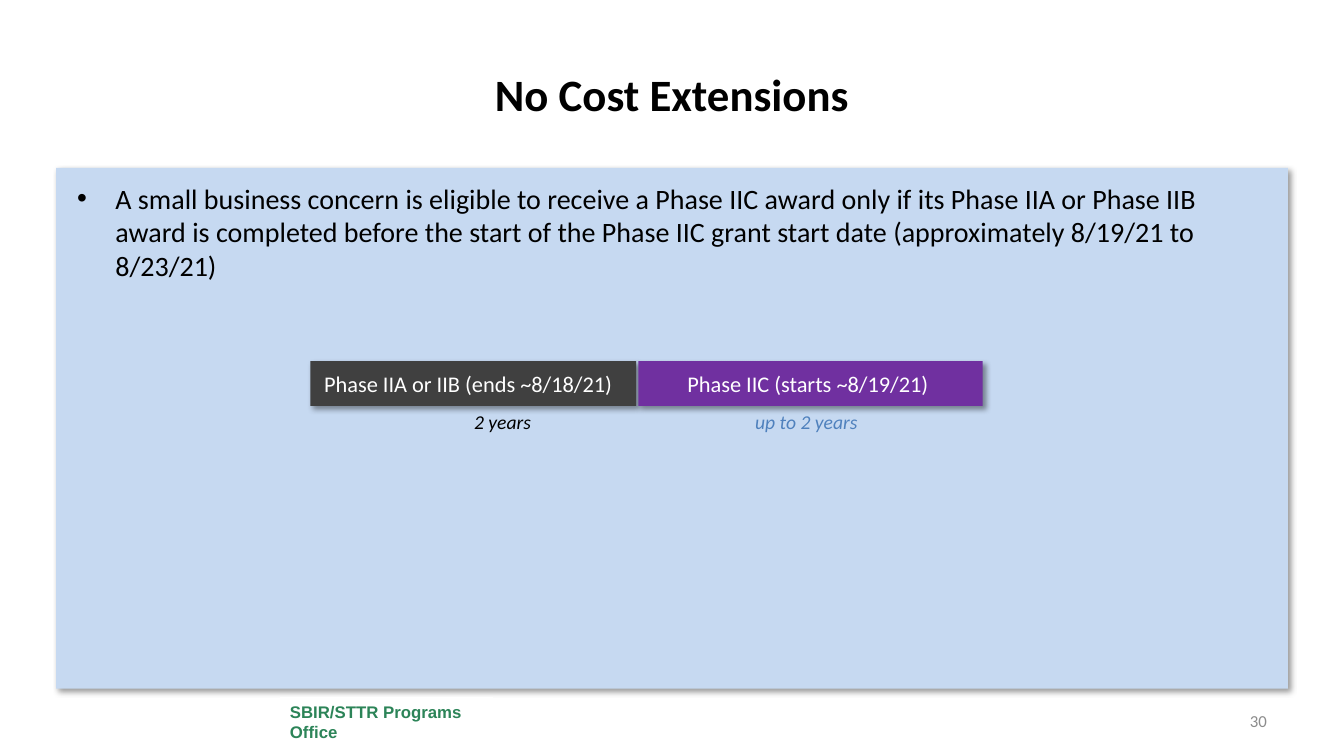
"""Build the slide on no cost extensions."""
from dataclasses import dataclass

from lxml import etree
from pptx import Presentation
from pptx.dml.color import RGBColor
from pptx.enum.shapes import MSO_SHAPE
from pptx.enum.text import MSO_ANCHOR, MSO_AUTO_SIZE, PP_ALIGN
from pptx.oxml import parse_xml
from pptx.oxml.ns import nsdecls, qn
from pptx.util import Inches, Pt

RECT = MSO_SHAPE.RECTANGLE
TOP, MIDDLE = MSO_ANCHOR.TOP, MSO_ANCHOR.MIDDLE
LEFT, CENTER, RIGHT = PP_ALIGN.LEFT, PP_ALIGN.CENTER, PP_ALIGN.RIGHT
NO_FIT = MSO_AUTO_SIZE.NONE
TITLE_ONLY = 5
WIDE, HIGH = Inches(13.33), Inches(7.5)
COLS, ROWS = 96, 54
BAR_TOP, NOTE_TOP = 25.8, 28.95
BODY = (
    "A small business concern is eligible to receive a Phase IIC award only if "
    "its Phase IIA or Phase IIB award is completed before the start of the "
    "Phase IIC grant start date (approximately 8/19/21 to 8/23/21)"
)


@dataclass(frozen=True)
class Area:
    """Place and size in grid columns and rows."""

    col: float
    row: float
    cols: float
    rows: float

    def place(self, shape) -> None:
        """Move and size a shape to this area."""
        shape.left, shape.top, shape.width, shape.height = self.box()

    def box(self) -> tuple[int, int, int, int]:
        """Return left, top, width and height in slide units."""
        return (
            round(self.col * WIDE / COLS),
            round(self.row * HIGH / ROWS),
            round(self.cols * WIDE / COLS),
            round(self.rows * HIGH / ROWS),
        )


@dataclass(frozen=True)
class Style:
    """Look of a text."""

    size: float
    color: str = "000000"
    align: PP_ALIGN = CENTER
    anchor: MSO_ANCHOR = MIDDLE
    face: str = "Calibri"
    bold: bool = False
    slant: bool = False


@dataclass(frozen=True)
class Phase:
    """A timed bar with its length noted below."""

    text: str
    area: Area
    fill: str
    inset: float
    note: str
    note_col: float
    note_hue: str


PHASES = (
    Phase("Phase IIA or IIB (ends ~8/18/21)", Area(22.18, BAR_TOP, 23.26, 3.2),
          "404040", 0.2, "2 years", 31.2, "000000"),
    Phase("Phase IIC (starts ~8/19/21)", Area(45.6, BAR_TOP, 24.6, 3.2),
          "7030A0", 0.15, "up to 2 years", 52.9, "4F81BD"),
)


def tint(code: str) -> RGBColor:
    """Turn a hex string into a colour."""
    return RGBColor.from_string(code)


def write(shape, text: str, style: Style):
    """Write one styled paragraph into a shape and return it."""
    frame = shape.text_frame
    frame.text = text
    frame.word_wrap = True
    frame.auto_size = NO_FIT
    frame.vertical_anchor = style.anchor
    para = frame.paragraphs[0]
    para.alignment = style.align
    font = para.font
    font.name, font.size = style.face, Pt(style.size)
    font.bold, font.italic = style.bold, style.slant
    font.color.rgb = tint(style.color)
    return para


def add_text(slide, area: Area, text: str, style: Style):
    """Add a text box and return its paragraph."""
    return write(slide.shapes.add_textbox(*area.box()), text, style)


def add_rect(slide, area: Area, fill: str, raised: bool = False):
    """Add a plain rectangle, with a soft shadow if raised."""
    shape = slide.shapes.add_shape(RECT, *area.box())
    shape.shadow.inherit = False
    shape.fill.solid()
    shape.fill.fore_color.rgb = tint(fill)
    shape.line.fill.background()
    if raised:
        effects = shape.element.spPr.find(qn("a:effectLst"))
        effects.append(parse_xml(
            f'<a:outerShdw {nsdecls("a")} blurRad="{Pt(4)}" dist="{Pt(3)}" '
            'dir="2700000" algn="tl" rotWithShape="0"><a:srgbClr val="000000">'
            '<a:alpha val="40000"/></a:srgbClr></a:outerShdw>'
        ))
    return shape


def add_bullet(para) -> None:
    """Give a paragraph a hanging round bullet."""
    props = para._p.get_or_add_pPr()
    hang = Inches(0.38)
    props.set("marL", str(hang))
    props.set("indent", str(-hang))
    mark = etree.Element(qn("a:buChar"), char="•")
    face = etree.Element(qn("a:buFont"), typeface="Arial")
    props.insert(0, face)
    props.insert(1, mark)


def add_phase(slide, phase: Phase) -> None:
    """Add a phase bar and the note below it."""
    bar = add_rect(slide, phase.area, phase.fill, raised=True)
    write(bar, phase.text, Style(16, "FFFFFF"))
    bar.text_frame.margin_right = Inches(phase.inset)
    add_text(slide, Area(phase.note_col, NOTE_TOP, 9.4, 2.42), phase.note,
             Style(14, phase.note_hue, anchor=TOP, slant=True))


def main() -> None:
    """Build and save the slide."""
    deck = Presentation()
    deck.slide_width, deck.slide_height = WIDE, HIGH
    slide = deck.slides.add_slide(deck.slide_layouts[TITLE_ONLY])

    add_rect(slide, Area(4, 12, 88, 37.2), "C6D9F1", raised=True)
    office = add_rect(slide, Area(20, 49.8, 15.2, 3.5), "FFFFFF")
    write(office, "SBIR/STTR Programs Office",
          Style(12, "2C8458", LEFT, face="Arial", bold=True))

    title = slide.shapes.title
    Area(4.8, 2.16, 86.4, 9).place(title)
    write(title, "No Cost Extensions", Style(32, bold=True))

    body = add_text(slide, Area(4.8, 12.6, 86.4, 35.64), BODY,
                    Style(20, align=LEFT, anchor=TOP))
    add_bullet(body)
    add_text(slide, Area(76, 50.04, 15.2, 2.88), "30",
             Style(12, "8C8C8C", RIGHT))
    for phase in PHASES:
        add_phase(slide, phase)

    deck.save("out.pptx")


if __name__ == "__main__":
    main()
